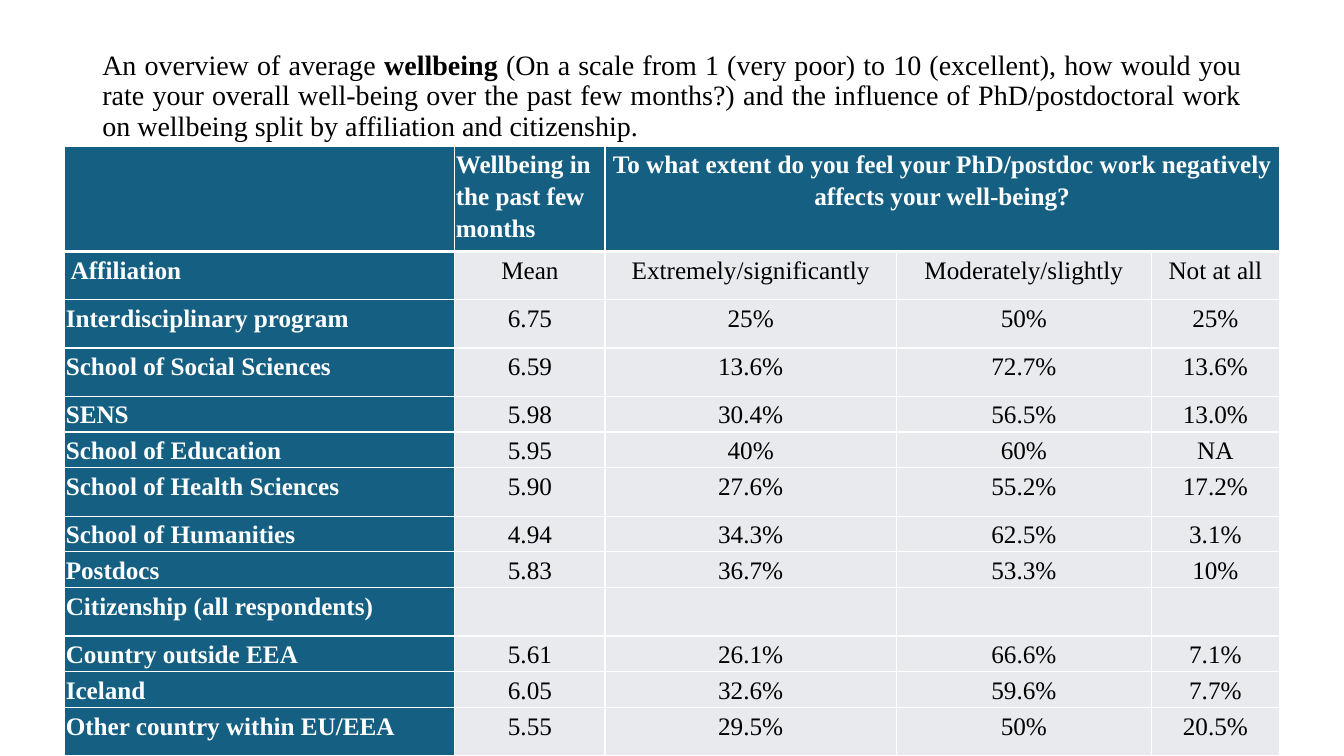
from lxml import etree
from pptx import Presentation
from pptx.dml.color import RGBColor
from pptx.enum.text import MSO_ANCHOR, PP_ALIGN
from pptx.oxml.ns import qn
from pptx.util import Pt

CENTER, LEFT, JUSTIFY = PP_ALIGN.CENTER, PP_ALIGN.LEFT, PP_ALIGN.JUSTIFY
MIDDLE = MSO_ANCHOR.MIDDLE

FONT = "Times New Roman"
COLORS = {"header": "156082", "body": "E8EAED", "light": "FFFFFF", "dark": "000000"}

TITLE = [
    ("An overview of average ", False),
    ("wellbeing", True),
    (" (On a scale from 1 (very poor) to 10 (excellent), how would you rate your "
     "overall well-being over the past few months?) and the influence of "
     "PhD/postdoctoral work on wellbeing split by affiliation and citizenship.", False),
]
TALL, SHORT = 34.5, 24.4
HEADER = (71.5, "", "Wellbeing in the past few months",
          "To what extent do you feel your PhD/postdoc work negatively affects your well-being?",
          "", "")
ROWS = [
    HEADER,
    (TALL, " Affiliation", "Mean", "Extremely/significantly", "Moderately/slightly", "Not at all"),
    (TALL, "Interdisciplinary program", "6.75", "25%", "50%", "25%"),
    (TALL, "School of Social Sciences", "6.59", "13.6%", "72.7%", "13.6%"),
    (SHORT, "SENS", "5.98", "30.4%", "56.5%", "13.0%"),
    (SHORT, "School of Education", "5.95", "40%", "60%", "NA"),
    (TALL, "School of Health Sciences", "5.90", "27.6%", "55.2%", "17.2%"),
    (SHORT, "School of Humanities", "4.94", "34.3%", "62.5%", "3.1%"),
    (SHORT, "Postdocs", "5.83", "36.7%", "53.3%", "10%"),
    (TALL, "Citizenship (all respondents)", "", "", "", ""),
    (SHORT, "Country outside EEA", "5.61", "26.1%", "66.6%", "7.1%"),
    (SHORT, "Iceland", "6.05", "32.6%", "59.6%", "7.7%"),
    (TALL, "Other country within EU/EEA", "5.55", "29.5%", "50%", "20.5%"),
]
COL_WIDTHS = [278.6, 107.3, 208.1, 182.2, 91.4]


def rgb(name):
    return RGBColor.from_string(COLORS[name])


def style_font(font, size, color, bold):
    font.name, font.size, font.bold = FONT, Pt(size), bold
    font.color.rgb = rgb(color)


def add_borders(cell, top, bottom):
    """Draw white borders; must run before the cell fill is set."""
    tc_pr = cell._tc.get_or_add_tcPr()
    for side, width in (("L", 1), ("R", 1), ("T", top), ("B", bottom)):
        ln = etree.SubElement(tc_pr, qn(f"a:ln{side}"), w=str(Pt(width)))
        fill = etree.SubElement(ln, qn("a:solidFill"))
        etree.SubElement(fill, qn("a:srgbClr"), val=COLORS["light"])


def fill_cell(cell, text, row, col):
    is_header = row == 0 or col == 0
    add_borders(cell, 3 if row == 1 else 1, 3 if row == 0 else 1)
    cell.fill.solid()
    cell.fill.fore_color.rgb = rgb("header" if is_header else "body")
    cell.margin_left = cell.margin_right = cell.margin_top = Pt(0.7)
    cell.margin_bottom = 0
    cell.text_frame.text = text
    p = cell.text_frame.paragraphs[0]
    p.line_spacing = 1.15
    p.alignment = LEFT if col == 0 or (row == 0 and col == 1) else CENTER
    for r in p.runs:
        style_font(r.font, 18, "light" if is_header else "dark", is_header)


def add_title(s):
    tf = s.shapes.add_textbox(Pt(66), Pt(28.8), Pt(828), Pt(80.6)).text_frame
    tf.word_wrap = True
    tf.vertical_anchor = MIDDLE
    p = tf.paragraphs[0]
    p.alignment, p.line_spacing = JUSTIFY, 0.9
    for text, bold in TITLE:
        r = p.add_run()
        r.text = text
        style_font(r.font, 20, "dark", bold)


def add_wellbeing_table(s):
    height = sum(row[0] for row in ROWS)
    table = s.shapes.add_table(len(ROWS), len(COL_WIDTHS), Pt(46.3), Pt(104.4),
                               Pt(sum(COL_WIDTHS)), Pt(height)).table
    for column, width in zip(table.columns, COL_WIDTHS):
        column.width = Pt(width)
    for i, (row_height, *texts) in enumerate(ROWS):
        table.rows[i].height = Pt(row_height)
        for j, text in enumerate(texts):
            fill_cell(table.cell(i, j), text, i, j)
    table.cell(0, 2).merge(table.cell(0, 4))


def main():
    prs = Presentation()
    prs.slide_width, prs.slide_height = Pt(960), Pt(540)
    s = prs.slides.add_slide(prs.slide_layouts[6])
    add_title(s)
    add_wellbeing_table(s)
    prs.save("out.pptx")


if __name__ == "__main__":
    main()
